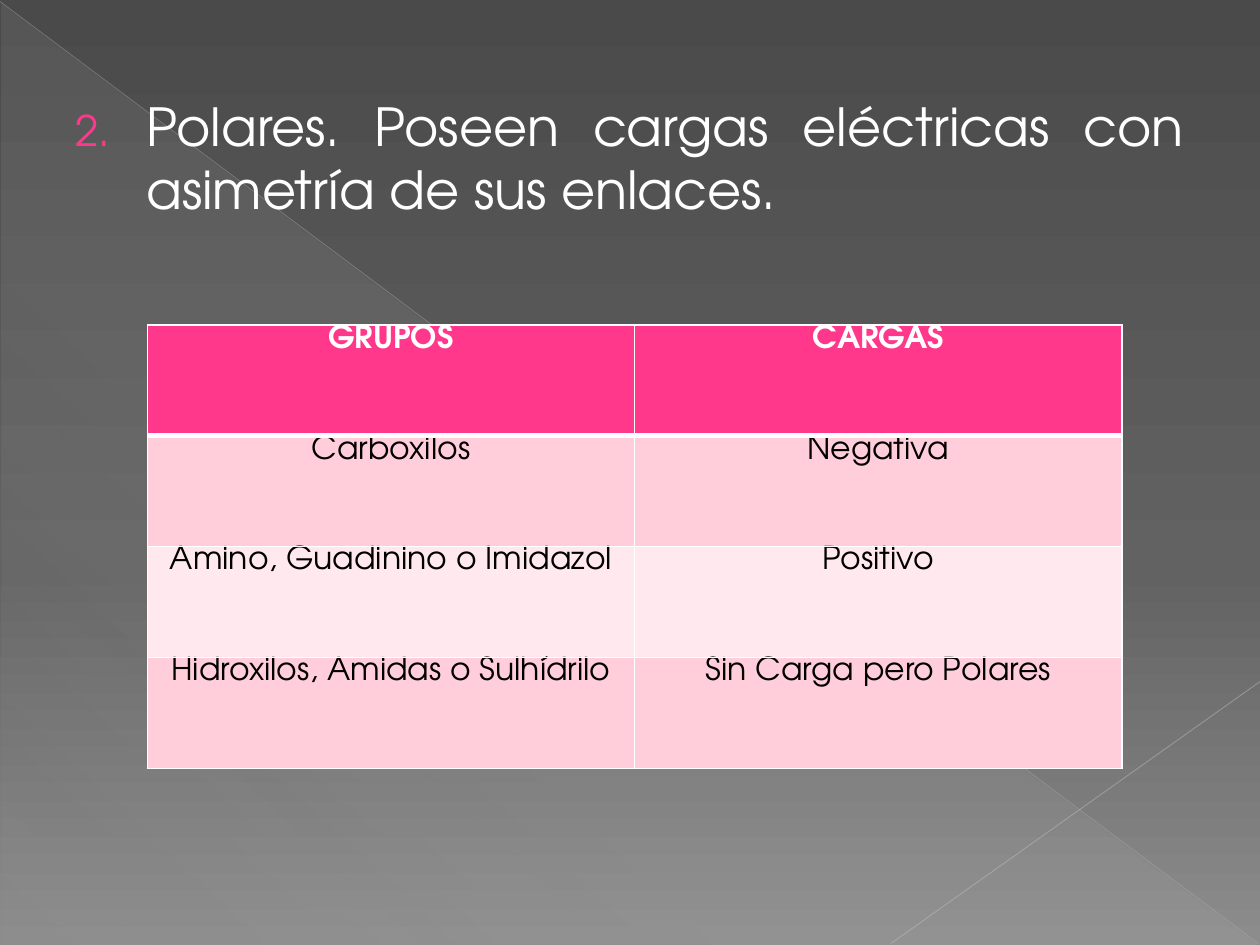
from lxml.etree import SubElement
from pptx import Presentation
from pptx.dml.color import RGBColor
from pptx.enum.shapes import MSO_CONNECTOR as Connector, MSO_SHAPE as Shape
from pptx.enum.text import PP_ALIGN as Align
from pptx.oxml.ns import qn
from pptx.util import Cm, Pt

# Content
FONT = "TeX Gyre Adventor"
PINK, WHITE, BLACK = "FF388C", "FFFFFF", "000000"
BANDS = ["FFCEDA", "FFE8EE"]
STATEMENT = "Polares. Poseen cargas eléctricas con asimetría de sus enlaces."
ROWS = [
    ("GRUPOS", "CARGAS"),
    ("Carboxilos", "Negativa"),
    ("Amino, Guadinino o Imidazol", "Positivo"),
    ("Hidroxilos, Amidas o Sulhídrilo", "Sin Carga pero Polares"),
]
# Gradient stops: position %, colour, opacity %
BACKGROUND = [(0, "4A4A4A", 100), (60, "626262", 100), (100, "8C8C8C", 100)]
TRIANGLE = [(0, "D2D2D2", 10), (70, "D2D2D2", 8), (100, "D2D2D2", 1)]
# Lines: start x, start y, end x, end y (cm), colour, width, opacity %
LINES = [
    (0, 0.03, 25.37, 19.02, "BFBFBF", 0.39, 35),
    (25.4, 13.74, 17.96, 19.02, "C6C6C6", 0.47, 45),
]


def color(value):
    return RGBColor.from_string(value)


def add(parent, tag, **attributes):
    return SubElement(parent, qn(tag), {k: str(v) for k, v in attributes.items()})


def set_gradient(properties, old_fill, stops, angle):
    """Put a linear gradient in place of the present fill."""
    gradient = add(properties, "a:gradFill", rotWithShape=1)
    stop_list = add(gradient, "a:gsLst")
    for position, value, opacity in stops:
        stop = add(stop_list, "a:gs", pos=position * 1000)
        add(add(stop, "a:srgbClr", val=value), "a:alpha", val=opacity * 1000)
    add(gradient, "a:lin", ang=angle * 60000, scaled=0)
    properties.replace(properties.find(qn(old_fill)), gradient)


def write(frame, text, *, size, fill=WHITE, bold=False, align=Align.CENTER):
    paragraph = frame.paragraphs[0]
    paragraph.alignment = align
    run = paragraph.add_run()
    run.text = text
    font = run.font
    font.name, font.size, font.bold = FONT, Pt(size), bold
    font.color.rgb = color(fill)
    return paragraph


def set_borders(cell, **widths):
    properties = cell._tc.get_or_add_tcPr()
    borders = []
    for side in ("L", "R", "T", "B"):
        line = add(properties, f"a:ln{side}", w=Pt(widths.get(side, 1)))
        add(add(line, "a:solidFill"), "a:srgbClr", val=WHITE)
        borders.append(line)
    for index, line in enumerate(borders):  # borders come before the fill
        properties.insert(index, line)


presentation = Presentation()
presentation.slide_width, presentation.slide_height = Cm(25.4), Cm(19.05)
slide = presentation.slides.add_slide(presentation.slide_layouts[6])
shapes = slide.shapes

# Background
slide.background.fill.solid()
set_gradient(slide.element.find(".//" + qn("p:bgPr")), "a:solidFill", BACKGROUND, 90)

# Faint triangle and crossing lines
triangle = shapes.add_shape(Shape.RIGHT_TRIANGLE, Cm(0.03), Cm(0.05), Cm(25.35), Cm(19))
triangle.shadow.inherit = False
triangle.line.fill.background()
triangle.fill.solid()
set_gradient(triangle._element.spPr, "a:solidFill", TRIANGLE, 133)

for x1, y1, x2, y2, value, width, opacity in LINES:
    line = shapes.add_connector(Connector.STRAIGHT, Cm(x1), Cm(y1), Cm(x2), Cm(y2))
    line.line.color.rgb = color(value)
    line.line.width = Pt(width)
    properties = line._element.spPr
    add(properties.find(".//" + qn("a:srgbClr")), "a:alpha", val=opacity * 1000)
    add(properties, "a:effectLst")

# Numbered statement
body = shapes.add_textbox(Cm(1.27), Cm(1.78), Cm(22.86), Cm(15.24))
body.text_frame.word_wrap = True
paragraph = write(body.text_frame, STATEMENT, size=30, align=Align.JUSTIFY)
paragraph.space_before = Pt(6)
properties = paragraph._p.get_or_add_pPr()
properties.set("marL", str(Cm(1.43)))
properties.set("indent", str(-Cm(1.43)))
add(add(properties, "a:buClr"), "a:srgbClr", val=PINK)
add(properties, "a:buSzPct", val=80000)
add(properties, "a:buFont", typeface=FONT)
add(properties, "a:buAutoNum", type="arabicPeriod", startAt=2)

# Table of groups and charges
table = shapes.add_table(len(ROWS), 2, Cm(2.97), Cm(6.55), Cm(19.65), Cm(8.94)).table
for row, texts in enumerate(ROWS):
    header = row == 0
    for column, text in enumerate(texts):
        cell = table.cell(row, column)
        cell.margin_top = cell.margin_bottom = 0
        cell.fill.solid()
        cell.fill.fore_color.rgb = color(PINK if header else BANDS[(row - 1) % 2])
        set_borders(cell, T=3 if row == 1 else 1, B=3 if header else 1)
        write(cell.text_frame, text, size=18, bold=header, fill=WHITE if header else BLACK)

presentation.save("out.pptx")
